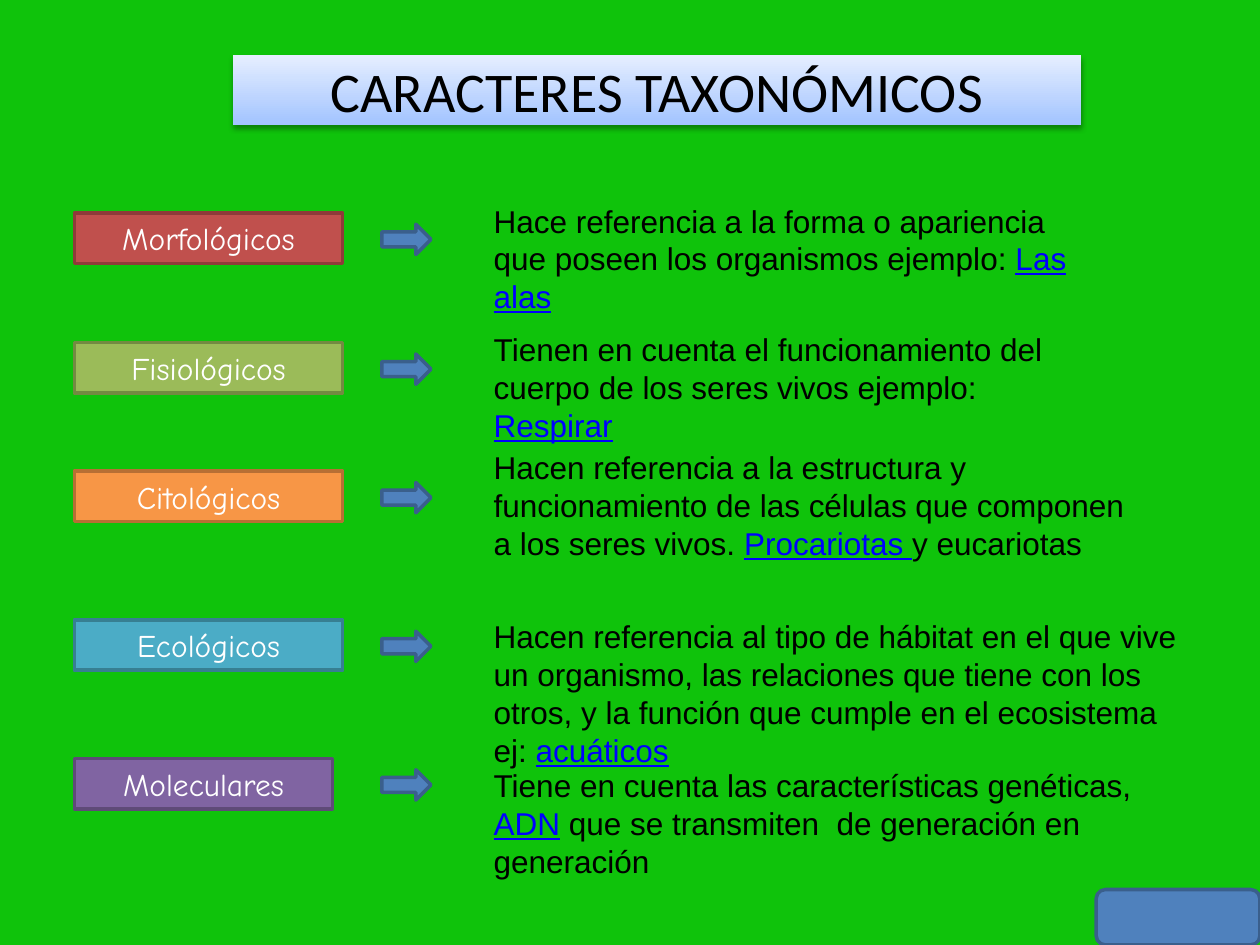
import pptx
import pptx.util
import pptx.dml.color
import pptx.enum.shapes
import pptx.enum.text

Inches = pptx.util.Inches
Pt = pptx.util.Pt
RGBColor = pptx.dml.color.RGBColor
Kind = pptx.enum.shapes.MSO_SHAPE
Align = pptx.enum.text.PP_ALIGN
Anchor = pptx.enum.text.MSO_ANCHOR

GREEN = RGBColor(0x0F, 0xC3, 0x0B)
BLACK = RGBColor(0, 0, 0)
WHITE = RGBColor(0xFF, 0xFF, 0xFF)
LINK = RGBColor(0, 0, 0xFF)
PALE = RGBColor(0xE5, 0xEE, 0xFF)
SKY = RGBColor(0xA3, 0xC4, 0xFF)
BLUE = RGBColor(0x4F, 0x81, 0xBD)
NAVY = RGBColor(0x3A, 0x5F, 0x8C)
RED = RGBColor(0xC0, 0x50, 0x4D)
WINE = RGBColor(0x8E, 0x3B, 0x39)
LIME = RGBColor(0x9B, 0xBB, 0x59)
MOSS = RGBColor(0x73, 0x8A, 0x42)
ORANGE = RGBColor(0xF7, 0x96, 0x46)
RUST = RGBColor(0xB7, 0x6F, 0x34)
AQUA = RGBColor(0x4B, 0xAC, 0xC6)
TEAL = RGBColor(0x37, 0x7F, 0x92)
PURPLE = RGBColor(0x80, 0x64, 0xA2)
PLUM = RGBColor(0x5F, 0x4A, 0x78)

HEAD = {"name": "Calibri", "size": Pt(32)}
LABEL = {"name": "Comic Neue", "size": Pt(18)}
BODY = {"name": "Arial", "size": Pt(18)}

ROWS = [
    (1.69, 2.13, "Morfológicos", RED, WINE, 1.55, 5.04, 0.71,
     "Hace referencia a la forma o apariencia que poseen los organismos ejemplo: ",
     "Las alas", ""),
    (2.72, 2.13, "Fisiológicos", LIME, MOSS, 2.57, 4.65, 0.71,
     "Tienen en cuenta el funcionamiento del cuerpo de los seres vivos ejemplo: ",
     "Respirar", ""),
    (3.74, 2.13, "Citológicos", ORANGE, RUST, 3.51, 5.28, 1.01,
     "Hacen referencia a la estructura y funcionamiento de las células que "
     "componen a los seres vivos. ",
     "Procariotas ", "y eucariotas"),
    (4.92, 2.13, "Ecológicos", AQUA, TEAL, 4.85, 5.67, 1.01,
     "Hacen referencia al tipo de hábitat en el que vive un organismo, las "
     "relaciones que tiene con los otros, y la función que cumple en el "
     "ecosistema ej: ",
     "acuáticos", ""),
    (6.02, 2.05, "Moleculares", PURPLE, PLUM, 6.03, 5.43, 0.71,
     "Tiene en cuenta las características genéticas, ",
     "ADN", " que se transmiten  de generación en generación"),
]


def add_run(para, text, form, color, under=False):
    run = para.add_run()
    run.text = text
    for key, value in {**form, "underline": under}.items():
        setattr(run.font, key, value)
    run.font.color.rgb = color


def add_form(slide, kind, box, fill, line):
    form = slide.shapes.add_shape(kind, *map(Inches, box))
    form.shadow.inherit = False
    form.fill.solid()
    form.fill.fore_color.rgb = fill
    form.line.color.rgb = line
    form.line.width = Pt(2)
    return form


def write_mid(form, text, font, color):
    frame = form.text_frame
    frame.word_wrap = True
    frame.vertical_anchor = Anchor.MIDDLE
    para = frame.paragraphs[0]
    para.alignment = Align.CENTER
    add_run(para, text, font, color)


def add_title(slide, text):
    bar = slide.shapes.add_shape(
        Kind.RECTANGLE, *map(Inches, (1.85, 0.44, 6.73, 0.55)))
    bar.line.fill.background()
    bar.fill.gradient()
    bar.fill.gradient_angle = 270
    for stop, color in zip(bar.fill.gradient_stops, (PALE, SKY)):
        stop.color.rgb = color
    write_mid(bar, text, HEAD, BLACK)


def add_body(slide, box, lead, link, tail):
    frame = slide.shapes.add_textbox(*map(Inches, box)).text_frame
    frame.word_wrap = True
    para = frame.paragraphs[0]
    add_run(para, lead, BODY, BLACK)
    add_run(para, link, BODY, LINK, True)
    if tail:
        add_run(para, tail, BODY, BLACK)


def add_row(slide, top, width, name, fill, line, text_top, wide, high, *parts):
    label = add_form(slide, Kind.RECTANGLE, (0.59, top, width, 0.4), fill, line)
    write_mid(label, name, LABEL, WHITE)
    add_form(slide, Kind.RIGHT_ARROW, (3.03, top + 0.09, 0.39, 0.24), BLUE, NAVY)
    add_body(slide, (3.82, text_top, wide, high), *parts)


def main():
    """Build the slide on taxonomic characters."""
    deck = pptx.Presentation()
    deck.slide_width, deck.slide_height = Inches(10), Inches(7.5)
    slide = deck.slides.add_slide(deck.slide_layouts[6])
    slide.background.fill.solid()
    slide.background.fill.fore_color.rgb = GREEN
    add_title(slide, "CARACTERES TAXONÓMICOS")
    for row in ROWS:
        add_row(slide, *row)
    add_form(slide, Kind.ROUNDED_RECTANGLE, (8.7, 7.06, 1.3, 0.44), BLUE, NAVY)
    deck.save("out.pptx")


if __name__ == "__main__":
    main()
